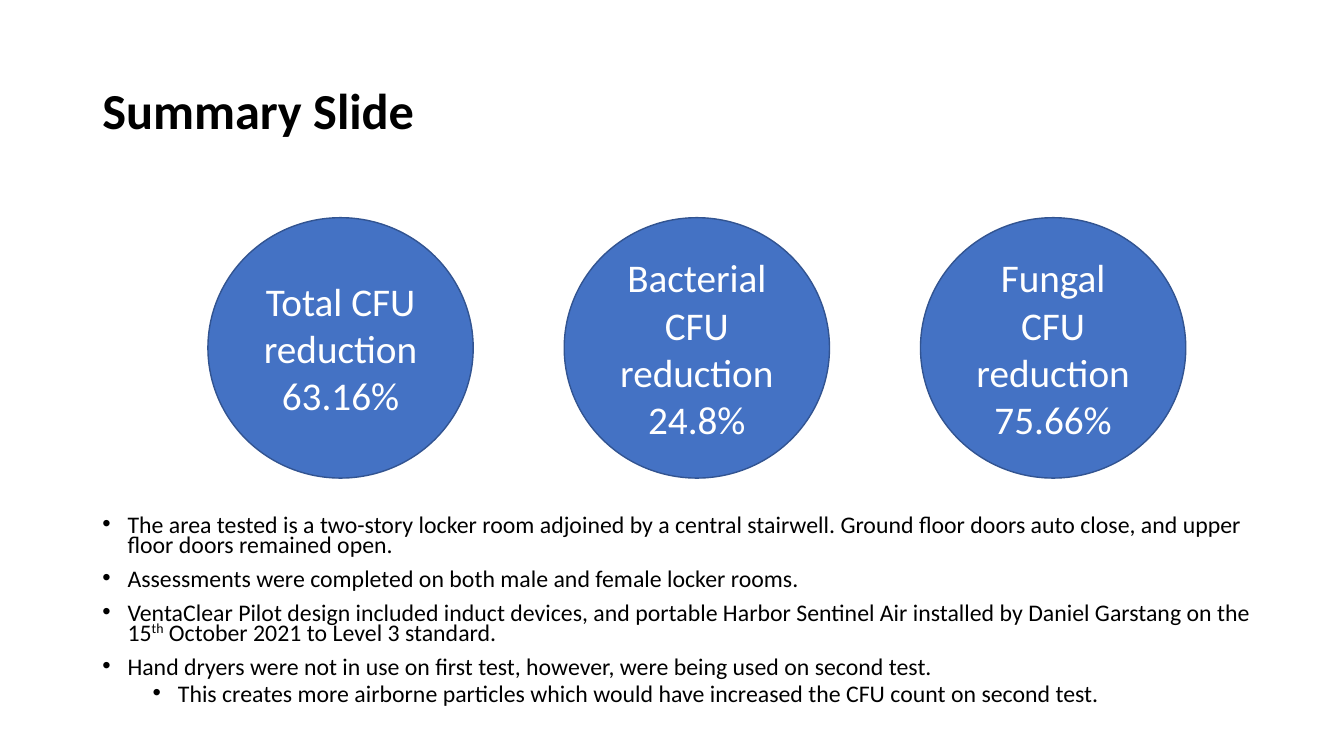
from lxml import etree
from pptx import Presentation
from pptx import util as u
from pptx.dml import color
from pptx.enum import shapes, text
from pptx.oxml import ns


def rgb(value):
    """Turn a hex string into a colour."""
    return color.RGBColor.from_string(value)


class SummaryPage:
    """Holds the style and the current slide, and draws each kind of element."""

    FACE = "Calibri"
    INK, PAPER = "000000", "FFFFFF"
    DISC_FILL, DISC_LINE = "4472C4", "325491"

    def __init__(self, deck):
        """Add a blank slide to the deck."""
        self.page = deck.slides.add_slide(deck.slide_layouts[6])

    def style(self, font, ink, **formats):
        """Set the typeface, the colour and any further font values."""
        for name, value in {"name": self.FACE, **formats}.items():
            setattr(font, name, value)
        font.color.rgb = rgb(ink)

    def text_box(self, place, anchor):
        """Add a wrapping text box and return its frame."""
        box = self.page.shapes.add_textbox(*map(u.Pt, place))
        box.text_frame.word_wrap = True
        box.text_frame.vertical_anchor = anchor
        return box.text_frame

    def title(self, place, words):
        """Write the slide title."""
        para = self.text_box(place, text.MSO_ANCHOR.MIDDLE).paragraphs[0]
        para.text = words
        para.line_spacing = 0.9
        self.style(para.runs[0].font, self.INK, size=u.Pt(36), bold=True)

    def bullets(self, place, items):
        """Write bulleted paragraphs from pairs of level and spans."""
        frame = self.text_box(place, text.MSO_ANCHOR.TOP)
        for index, (level, spans) in enumerate(items):
            para = frame.add_paragraph() if index else frame.paragraphs[0]
            props = para._p.get_or_add_pPr()
            props.set("marL", str(u.Pt(18 + 36 * level)))
            props.set("indent", str(u.Pt(-18)))
            etree.SubElement(props, ns.qn("a:buFont")).set("typeface", "Arial")
            etree.SubElement(props, ns.qn("a:buChar")).set("char", "•")
            gap = (5 if level else 10) if index else 0
            formats = {"level": level, "line_spacing": 0.7, "space_before": u.Pt(gap)}
            for name, value in formats.items():
                setattr(para, name, value)
            for words, raised in spans:
                span = para.add_run()
                span.text = words
                self.style(span.font, self.INK, size=u.Pt(17))
                if raised:
                    span.font._element.set("baseline", "30000")

    def disc(self, place, lines):
        """Draw a filled circle with one centred paragraph per line."""
        disc = self.page.shapes.add_shape(shapes.MSO_SHAPE.OVAL, *map(u.Pt, place))
        disc.shadow.inherit = False
        disc.fill.solid()
        disc.fill.fore_color.rgb = rgb(self.DISC_FILL)
        disc.line.color.rgb = rgb(self.DISC_LINE)
        disc.line.width = u.Pt(1)
        frame = disc.text_frame
        frame.word_wrap = True
        frame.vertical_anchor = text.MSO_ANCHOR.MIDDLE
        frame.text = "\n".join(lines)
        for para in frame.paragraphs:
            para.alignment = text.PP_ALIGN.CENTER
            self.style(para.runs[0].font, self.PAPER, size=u.Pt(28))


def main():
    """Build the summary slide and save it."""
    deck = Presentation()
    deck.slide_width, deck.slide_height = u.Pt(960), u.Pt(540)
    summary = SummaryPage(deck)
    summary.title((66, 28.75, 618.5, 104.4), "Summary Slide")
    summary.bullets((66, 365.75, 862, 154.8), [
        (0, [("The area tested is a two-story locker room adjoined by a central stairwell. "
              "Ground floor doors auto close, and upper floor doors remained open.", False)]),
        (0, [("Assessments were completed on both male and female locker rooms.", False)]),
        (0, [("VentaClear Pilot design included induct devices, and portable Harbor Sentinel Air "
              "installed by Daniel Garstang on the 15", False),
             ("th", True),
             (" October 2021 to Level 3 standard.", False)]),
        (0, [("Hand dryers were not in use on first test, however, "
              "were being used on second test.", False)]),
        (1, [("This creates more airborne particles which would have increased "
              "the CFU count on second test.", False)]),
    ])
    reductions = [("Total", "63.16%"), ("Bacterial", "24.8%"), ("Fungal", "75.66%")]
    for column, (group, share) in enumerate(reductions):
        place = (148.5 + 254.5 * column, 155.5, 189.5, 186)
        summary.disc(place, (f"{group} CFU reduction", share))
    deck.save("out.pptx")


if __name__ == "__main__":
    main()
